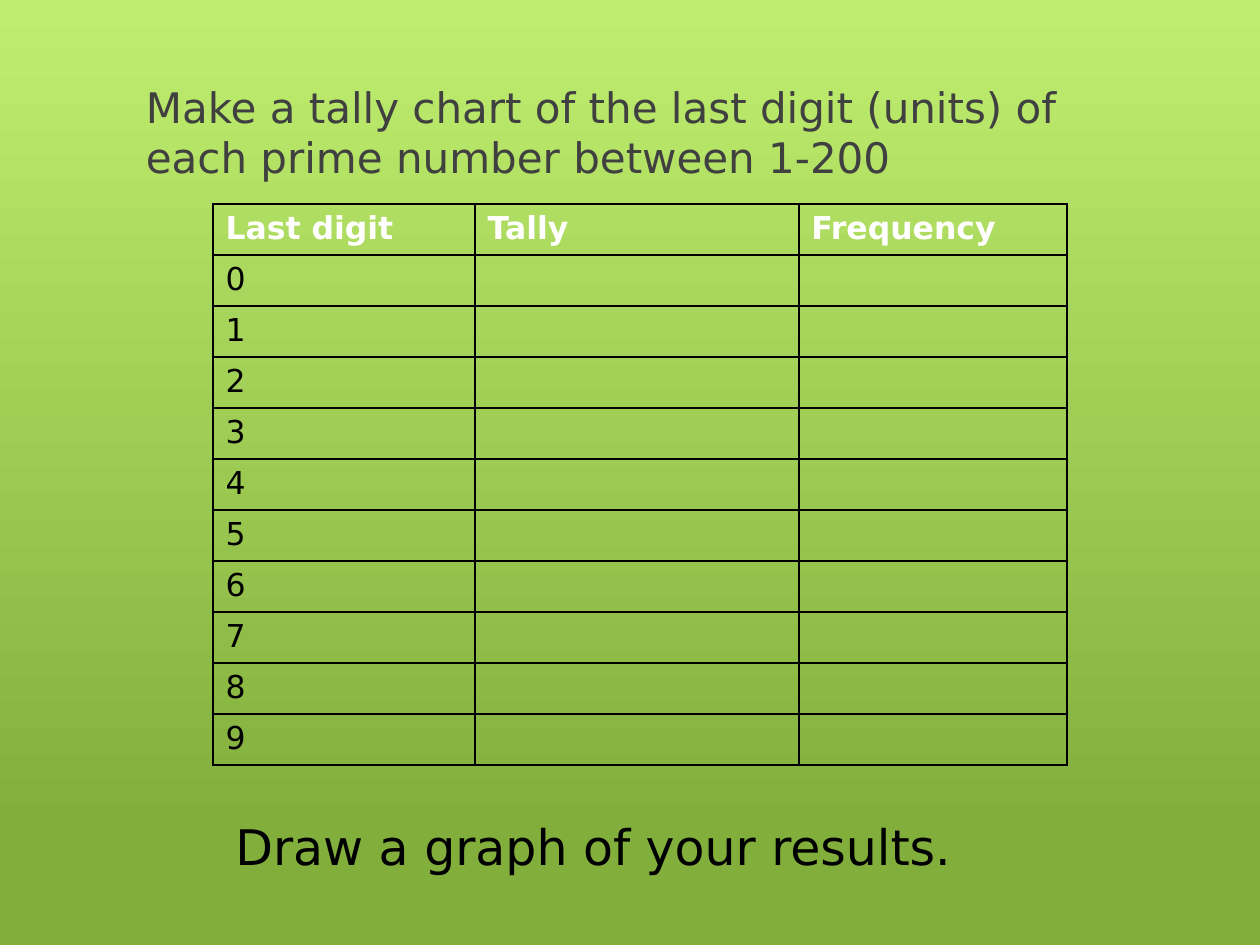
from lxml import etree
from pptx import Presentation
from pptx.dml.color import RGBColor
from pptx.enum.text import MSO_ANCHOR as Anchor, MSO_AUTO_SIZE as AutoSize
from pptx.oxml.ns import qn
from pptx.util import Inches, Pt

TITLE = "Make a tally chart of the last digit (units) of each prime number between 1-200"
TASK = "Draw a graph of your results."
HEADERS = ["Last digit", "Tally", "Frequency"]
DIGITS = [str(digit) for digit in range(10)]
COLUMN_WIDTHS = [2.08, 2.57, 2.13]
ROW_HEIGHT = 0.405
FONT = "DejaVu Sans"
COLORS = {
    "light": "BFEE6F",
    "dark": "82AE3C",
    "title": "404040",
    "header": "FFFFFF",
    "ink": "000000",
}


def color(name):
    return RGBColor.from_string(COLORS[name])


def write(frame, text, size, color_name, bold=False):
    paragraph = frame.paragraphs[0]
    paragraph.text = text
    font = paragraph.font
    font.name, font.size, font.bold = FONT, Pt(size), bold
    font.color.rgb = color(color_name)


def add_text(slide, box, text, size, color_name, anchor):
    frame = slide.shapes.add_textbox(*map(Inches, box)).text_frame
    frame.word_wrap = True
    frame.vertical_anchor = anchor
    write(frame, text, size, color_name)
    return frame


def add_borders(cell):
    properties = cell._tc.get_or_add_tcPr()
    for side in ("lnL", "lnR", "lnT", "lnB"):
        line = etree.SubElement(properties, qn(f"a:{side}"), w=str(Pt(1)))
        fill = etree.SubElement(line, qn("a:solidFill"))
        etree.SubElement(fill, qn("a:srgbClr"), val=COLORS["ink"])


def add_tally_table(slide):
    rows = [HEADERS] + [[digit, "", ""] for digit in DIGITS]
    table = slide.shapes.add_table(
        len(rows), len(HEADERS), Inches(1.69), Inches(1.62),
        Inches(sum(COLUMN_WIDTHS)), Inches(ROW_HEIGHT * len(rows)),
    ).table
    table.horz_banding = False
    for column, width in zip(table.columns, COLUMN_WIDTHS):
        column.width = Inches(width)
    for row_index, texts in enumerate(rows):
        table.rows[row_index].height = Inches(ROW_HEIGHT)
        is_header = row_index == 0
        for column_index, text in enumerate(texts):
            cell = table.cell(row_index, column_index)
            add_borders(cell)
            cell.fill.background()
            write(cell.text_frame, text, 18, "header" if is_header else "ink", is_header)


def set_background(slide):
    fill = slide.background.fill
    fill.gradient()
    fill.gradient_angle = 270
    for stop, (position, name) in zip(fill.gradient_stops, [(0, "light"), (0.88, "dark")]):
        stop.position = position
        stop.color.rgb = color(name)


def main():
    presentation = Presentation()
    presentation.slide_width, presentation.slide_height = Inches(10), Inches(7.5)
    slide = presentation.slides.add_slide(presentation.slide_layouts[6])
    set_background(slide)
    add_text(slide, (1.06, 0.13, 7.79, 1.83), TITLE, 24, "title", Anchor.MIDDLE)
    add_tally_table(slide)
    task = add_text(slide, (1.77, 6.43, 7.48, 0.57), TASK, 28, "ink", Anchor.TOP)
    task.auto_size = AutoSize.SHAPE_TO_FIT_TEXT
    presentation.save("out.pptx")


if __name__ == "__main__":
    main()
